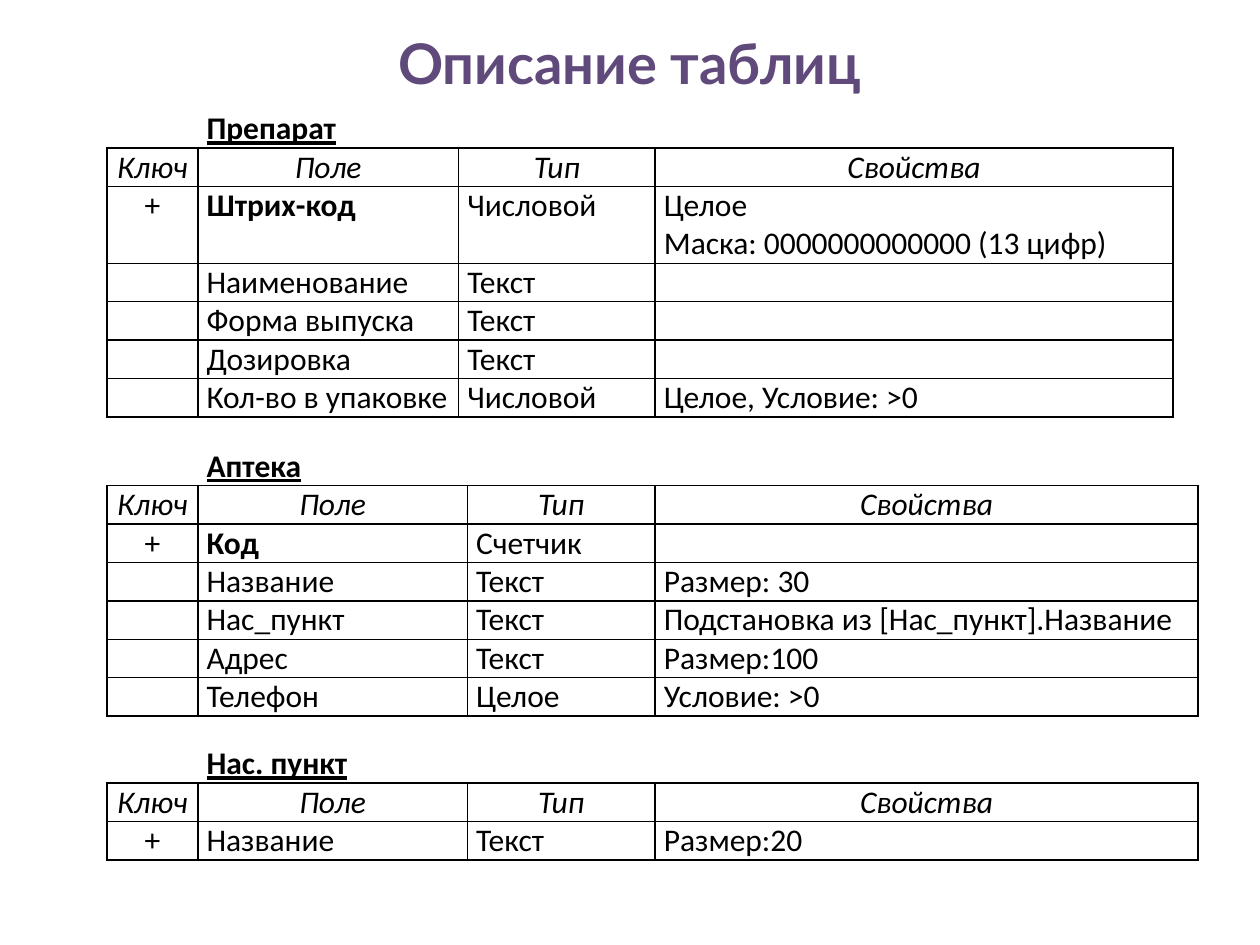
from pptx import Presentation
from pptx.dml.color import RGBColor
from pptx.enum.text import MSO_ANCHOR, PP_ALIGN as AL
from pptx.oxml.ns import qn
from pptx.util import Inches, Pt
from lxml.etree import SubElement

PURPLE = RGBColor(0x60, 0x4A, 0x7B)
BLACK = RGBColor(0, 0, 0)
ROW = 0.305
LEFT = 0.85
HEADER = ["Ключ", "Поле", "Тип", "Свойства"]
WIDE = [0.72, 2.14, 1.49, 4.31]

# name, top, column widths, key field in bold, field rows
TABLES = [
    ("Препарат", 0.87, [0.72, 2.07, 1.56, 4.11], True, [
        ["+", "Штрих-код", "Числовой", "Целое\nМаска: 0000000000000 (13 цифр)"],
        ["", "Наименование", "Текст", ""],
        ["", "Форма выпуска", "Текст", ""],
        ["", "Дозировка", "Текст", ""],
        ["", "Кол-во в упаковке", "Числовой", "Целое, Условие: >0"]]),
    ("Аптека", 3.55, WIDE, True, [
        ["+", "Код", "Счетчик", ""],
        ["", "Название", "Текст", "Размер: 30"],
        ["", "Нас_пункт", "Текст", "Подстановка из [Нас_пункт].Название"],
        ["", "Адрес", "Текст", "Размер:100"],
        ["", "Телефон", "Целое", "Условие: >0"]]),
    ("Нас. пункт", 5.91, WIDE, False, [
        ["+", "Название", "Текст", "Размер:20"]]),
]


def set_borders(cell, drawn):
    """Draw black 1 pt lines on the sides named in drawn, none on the others."""
    tcPr = cell._tc.get_or_add_tcPr()
    for side in "LRTB":
        ln = SubElement(tcPr, qn(f"a:ln{side}"), w=str(Pt(1)))
        if side in drawn:
            fill = SubElement(ln, qn("a:solidFill"))
            SubElement(fill, qn("a:srgbClr"), val=str(BLACK))
        else:
            SubElement(ln, qn("a:noFill"))


def format_runs(tf, font, size, color, align, bold=False, italic=False, underline=False):
    for p in tf.paragraphs:
        p.alignment = align
        for r in p.runs:
            r.font.name, r.font.size, r.font.color.rgb = font, Pt(size), color
            r.font.bold, r.font.italic, r.font.underline = bold, italic, underline


prs = Presentation()
prs.slide_width, prs.slide_height = Inches(10), Inches(7.5)
s = prs.slides.add_slide(prs.slide_layouts[6])

title = s.shapes.add_textbox(Inches(0.5), Inches(0.16), Inches(9), Inches(0.66))
tf = title.text_frame
tf.word_wrap = True
tf.vertical_anchor = MSO_ANCHOR.MIDDLE
tf.text = "Описание таблиц"
format_runs(tf, "Lato", 32, PURPLE, AL.CENTER, bold=True)

for name, top, widths, bold_key, fields in TABLES:
    rows = [["", name, "", ""], HEADER] + fields
    heights = [ROW * (1 + max(text.count("\n") for text in row)) for row in rows]
    table = s.shapes.add_table(len(rows), len(widths), Inches(LEFT), Inches(top),
                               Inches(sum(widths)), Inches(sum(heights))).table
    table.first_row = table.horz_banding = False
    for column, width in zip(table.columns, widths):
        column.width = Inches(width)
    table.cell(0, 1).merge(table.cell(0, 3))

    for i, row in enumerate(rows):
        table.rows[i].height = Inches(heights[i])
        for j, text in enumerate(row):
            cell = table.cell(i, j)
            cell.margin_left = cell.margin_right = Inches(0.07)
            cell.margin_top = cell.margin_bottom = 0
            set_borders(cell, "B" if i == 0 else "LRTB")
            cell.fill.background()
            if text:
                cell.text_frame.text = text
                centred = i == 1 or j == 0
                align = AL.CENTER if centred else AL.LEFT if i > 1 and j == 1 else AL.JUSTIFY
                is_key = bold_key and i == 2 and j == 1
                format_runs(cell.text_frame, "Calibri", 18, BLACK, align,
                            bold=i == 0 or is_key, italic=i == 1, underline=i == 0)

prs.save("out.pptx")
